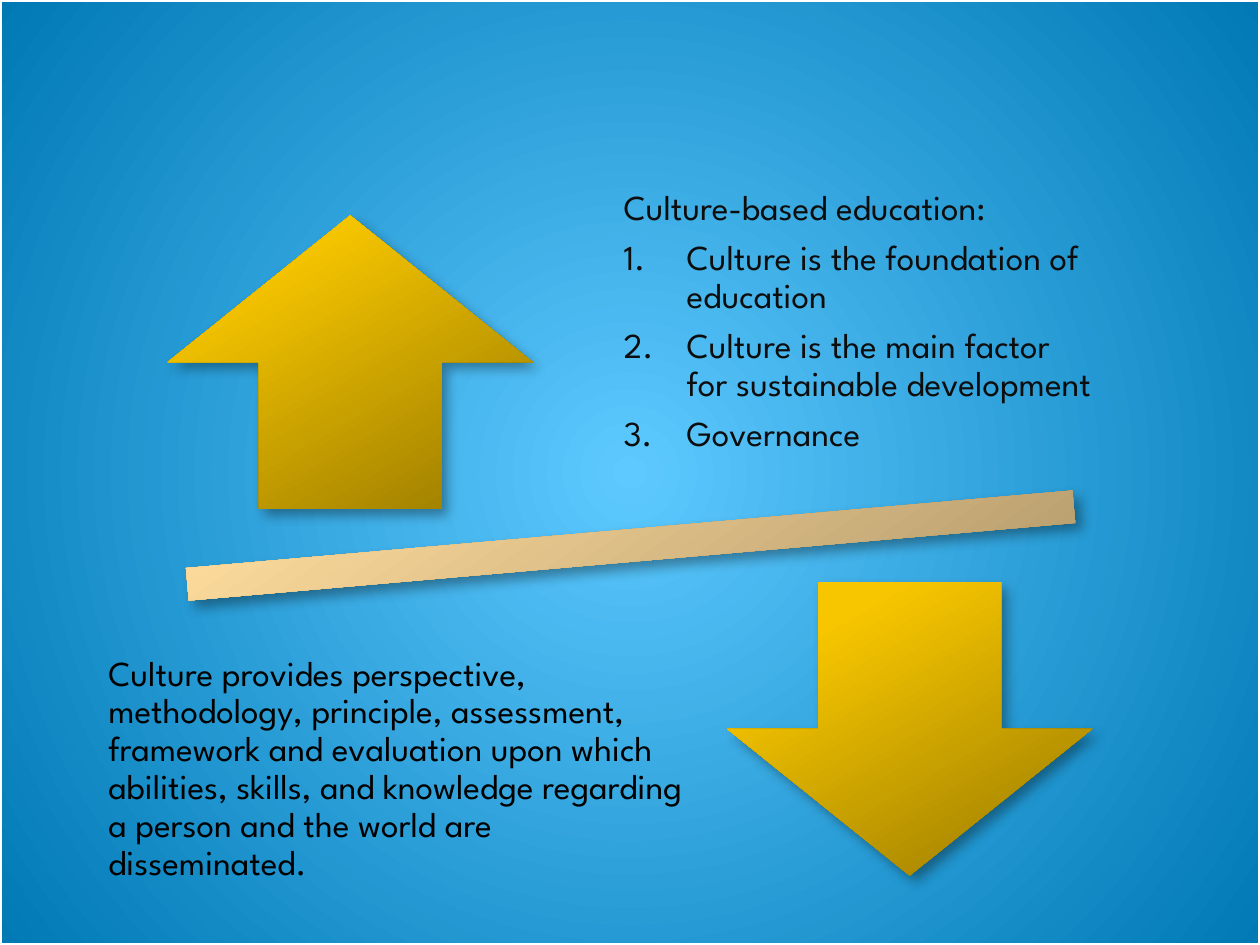
from dataclasses import dataclass

from lxml.etree import SubElement
from pptx import Presentation
from pptx.dml.color import RGBColor
from pptx.enum.shapes import MSO_SHAPE
from pptx.enum.text import MSO_ANCHOR
from pptx.oxml.ns import qn
from pptx.util import Inches, Pt


@dataclass(frozen=True)
class Theme:
    font: str = "League Spartan"
    text_size: int = 20
    ink: str = "0D0D0D"
    black: str = "000000"
    frame: str = "FFFFFF"
    sky: tuple = ((0, "5DC9FF"), (100, "0079B5"))
    sand: tuple = ((0, "9F885E"), (80, "FFDD9E"), (100, "FFDEA0"))
    gold: tuple = ((0, "977900"), (80, "F7C600"), (100, "F8C700"))


THEME = Theme()


def set_gradient(owner, fill, stops, angle=None):
    """Give a fill its stops: linear at a clockwise angle, or circular without one."""
    fill.gradient()
    gradient = owner.element.find(f".//{qn('a:gradFill')}")
    for child in list(gradient):
        gradient.remove(child)
    stop_list = SubElement(gradient, qn("a:gsLst"))
    for position, color in stops:
        stop = SubElement(stop_list, qn("a:gs"), pos=str(position * 1000))
        SubElement(stop, qn("a:srgbClr"), val=color)
    if angle is None:
        circle = SubElement(gradient, qn("a:path"), path="circle")
        SubElement(circle, qn("a:fillToRect"),
                   {side: "50000" for side in "ltrb"})
    else:
        SubElement(gradient, qn("a:lin"), ang=str(angle * 60000), scaled="0")


def add_shadow(shape):
    shape.shadow.inherit = False
    effects = shape.element.spPr.find(qn("a:effectLst"))
    shadow = SubElement(effects, qn("a:outerShdw"), blurRad=str(Pt(7)),
                        dist=str(Pt(5)), dir=str(50 * 60000), rotWithShape="0")
    color = SubElement(shadow, qn("a:srgbClr"), val=THEME.black)
    SubElement(color, qn("a:alpha"), val="35000")


def add_frame(slide, width, height):
    frame = slide.shapes.add_shape(MSO_SHAPE.RECTANGLE, 0, 0, width, height)
    frame.shadow.inherit = False
    frame.fill.background()
    frame.line.color.rgb = RGBColor.from_string(THEME.frame)
    frame.line.width = Pt(2)


def add_balance_part(slide, preset, box, stops, rotation=0):
    part = slide.shapes.add_shape(preset, *map(Inches, box))
    part.rotation = rotation
    set_gradient(part, part.fill, stops, angle=240)
    part.line.fill.background()
    add_shadow(part)


def number_paragraph(paragraph):
    properties = paragraph._p.get_or_add_pPr()
    properties.set("marL", str(Inches(0.5)))
    properties.set("indent", str(Inches(-0.5)))
    SubElement(properties, qn("a:buFont"), typeface="+mj-lt")
    SubElement(properties, qn("a:buAutoNum"), type="arabicPeriod")


def add_statement(slide, box, color, lead, points=()):
    frame = slide.shapes.add_textbox(*map(Inches, box)).text_frame
    frame.word_wrap = True
    frame.vertical_anchor = MSO_ANCHOR.MIDDLE
    frame.margin_left = frame.margin_right = Inches(0.28)
    frame.margin_top = frame.margin_bottom = Inches(0.28)
    frame.text = "\n".join((lead, *points))
    for paragraph in frame.paragraphs[1:]:
        number_paragraph(paragraph)
    for paragraph in frame.paragraphs:
        paragraph.line_spacing = 0.9
        paragraph.space_after = Pt(0.35 * THEME.text_size)
        paragraph.font.name = THEME.font
        paragraph.font.size = Pt(THEME.text_size)
        paragraph.font.color.rgb = RGBColor.from_string(color)


def main():
    prs = Presentation()
    prs.slide_width, prs.slide_height = Inches(10), Inches(7.5)
    slide = prs.slides.add_slide(prs.slide_layouts[6])

    # Backdrop
    set_gradient(slide, slide.background.fill, THEME.sky)
    add_frame(slide, prs.slide_width, prs.slide_height)

    # Tilted beam between the two sides
    add_balance_part(slide, MSO_SHAPE.MATH_MINUS, (0.2, 3.78, 9.61, 1.1),
                     THEME.sand, rotation=355)

    # Upper side: culture-based education
    add_balance_part(slide, MSO_SHAPE.UP_ARROW, (1.33, 1.71, 2.9, 2.33), THEME.gold)
    add_statement(slide, (4.67, 1.33, 4.33, 2.45), THEME.ink,
                  "Culture-based education:",
                  ("Culture is the foundation of education",
                   "Culture is the main factor for sustainable development",
                   "Governance"))

    # Lower side: what culture provides
    add_balance_part(slide, MSO_SHAPE.DOWN_ARROW, (5.77, 4.62, 2.9, 2.33), THEME.gold)
    add_statement(slide, (0.58, 4.88, 5.17, 2.45), THEME.black,
                  "Culture provides perspective, methodology, principle, "
                  "assessment, framework and evaluation upon which abilities, "
                  "skills, and knowledge regarding a person and the world are "
                  "disseminated.")

    prs.save("out.pptx")


if __name__ == "__main__":
    main()
